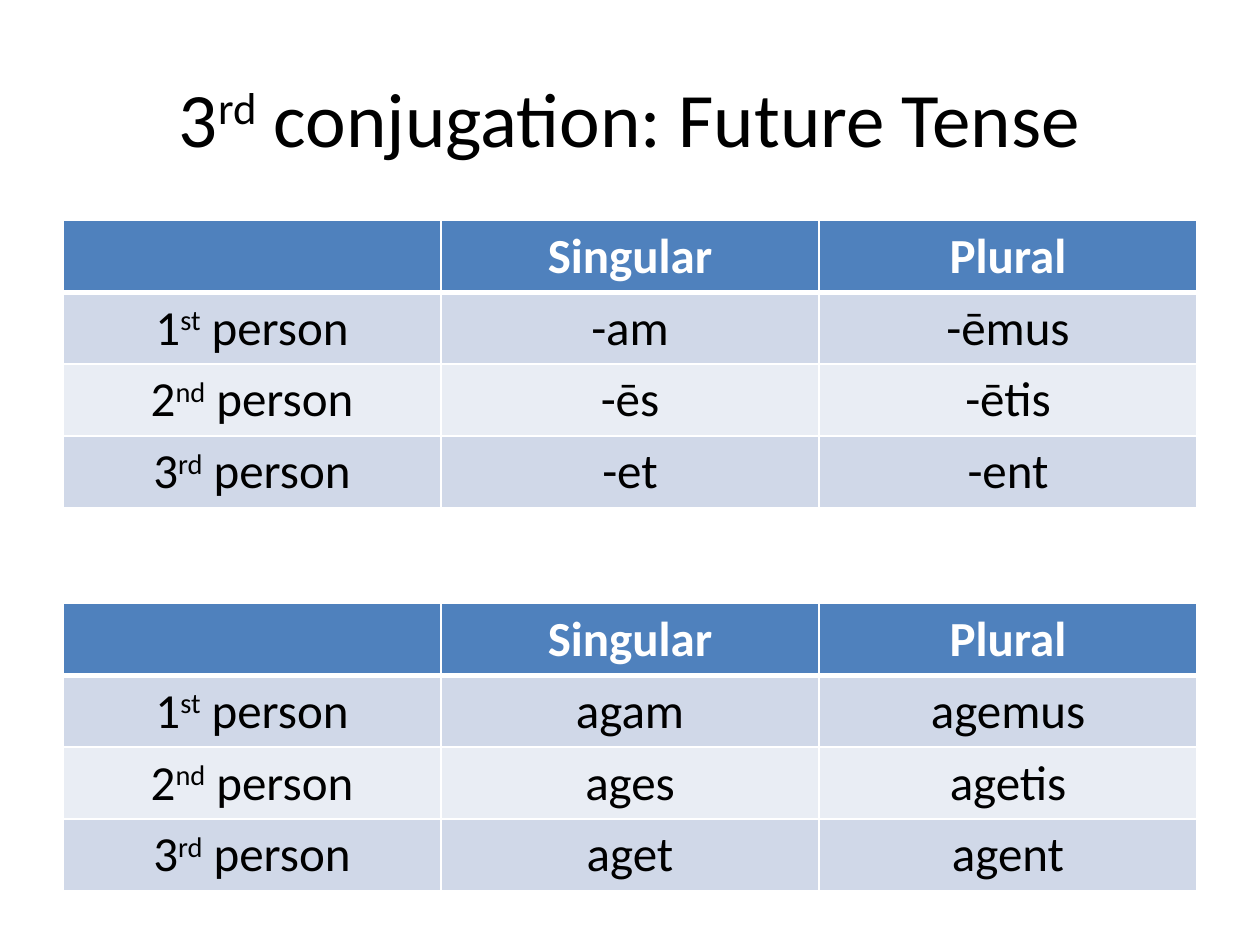
from lxml import etree
from pptx import Presentation
from pptx.dml.color import RGBColor
from pptx.enum.text import MSO_ANCHOR, PP_ALIGN
from pptx.oxml.ns import qn
from pptx.util import Inches, Pt

CENTER = PP_ALIGN.CENTER
MIDDLE = MSO_ANCHOR.MIDDLE
COLORS = {
    "text": "000000",
    "header text": "FFFFFF",
    "border": "FFFFFF",
    "header": "4F81BD",
    "odd row": "D0D8E8",
    "even row": "E9EDF4",
}
MARGIN = 0.5
COLUMN_WIDTH = 3
ROW_HEIGHT = 0.57
HEADER = ["", "Singular", "Plural"]
PERSONS = ["1^st^ person", "2^nd^ person", "3^rd^ person"]
# Top of each table, then its singular and plural forms by person
TABLES = [
    (1.75, [("-am", "-ēmus"), ("-ēs", "-ētis"), ("-et", "-ent")]),
    (4.79, [("agam", "agemus"), ("ages", "agetis"), ("aget", "agent")]),
]


def write_centered(para, text, size, color, bold=False):
    """Write text in which ^...^ marks a superscript."""
    para.alignment = CENTER
    para.font.name = "Calibri"
    para.font.size = Pt(size)
    para.font.bold = bold
    para.font.color.rgb = RGBColor.from_string(COLORS[color])
    for index, part in enumerate(text.split("^")):
        if part:
            span = para.add_run()
            span.text = part
            if index % 2:
                span._r.get_or_add_rPr().set("baseline", "30000")


def add_border(cell, side, points):
    line = etree.SubElement(cell._tc.get_or_add_tcPr(), qn(f"a:ln{side}"), w=str(Pt(points)))
    fill = etree.SubElement(line, qn("a:solidFill"))
    etree.SubElement(fill, qn("a:srgbClr"), val=COLORS["border"])


deck = Presentation()
deck.slide_width, deck.slide_height = Inches(10), Inches(7.5)
page = deck.slides.add_slide(deck.slide_layouts[6])

title = page.shapes.add_textbox(Inches(MARGIN), Inches(0.3), Inches(9), Inches(1.25))
title.text_frame.word_wrap = True
title.text_frame.vertical_anchor = MIDDLE
write_centered(title.text_frame.paragraphs[0], "3^rd^ conjugation: Future Tense", 44, "text")

for top, forms in TABLES:
    rows = [HEADER] + [[person, *pair] for person, pair in zip(PERSONS, forms)]
    table = page.shapes.add_table(
        len(rows), len(HEADER), Inches(MARGIN), Inches(top),
        Inches(COLUMN_WIDTH * len(HEADER)), Inches(ROW_HEIGHT * len(rows)),
    ).table
    for row_index, row in enumerate(rows):
        is_header = row_index == 0
        band = "header" if is_header else "odd row" if row_index % 2 else "even row"
        borders = {"L": 1, "R": 1, "T": 3 if row_index == 1 else 1, "B": 3 if is_header else 1}
        for column_index, text in enumerate(row):
            cell = table.cell(row_index, column_index)
            for side, points in borders.items():
                add_border(cell, side, points)
            cell.fill.solid()
            cell.fill.fore_color.rgb = RGBColor.from_string(COLORS[band])
            write_centered(cell.text_frame.paragraphs[0], text, 28,
                           "header text" if is_header else "text", is_header)

deck.save("out.pptx")
